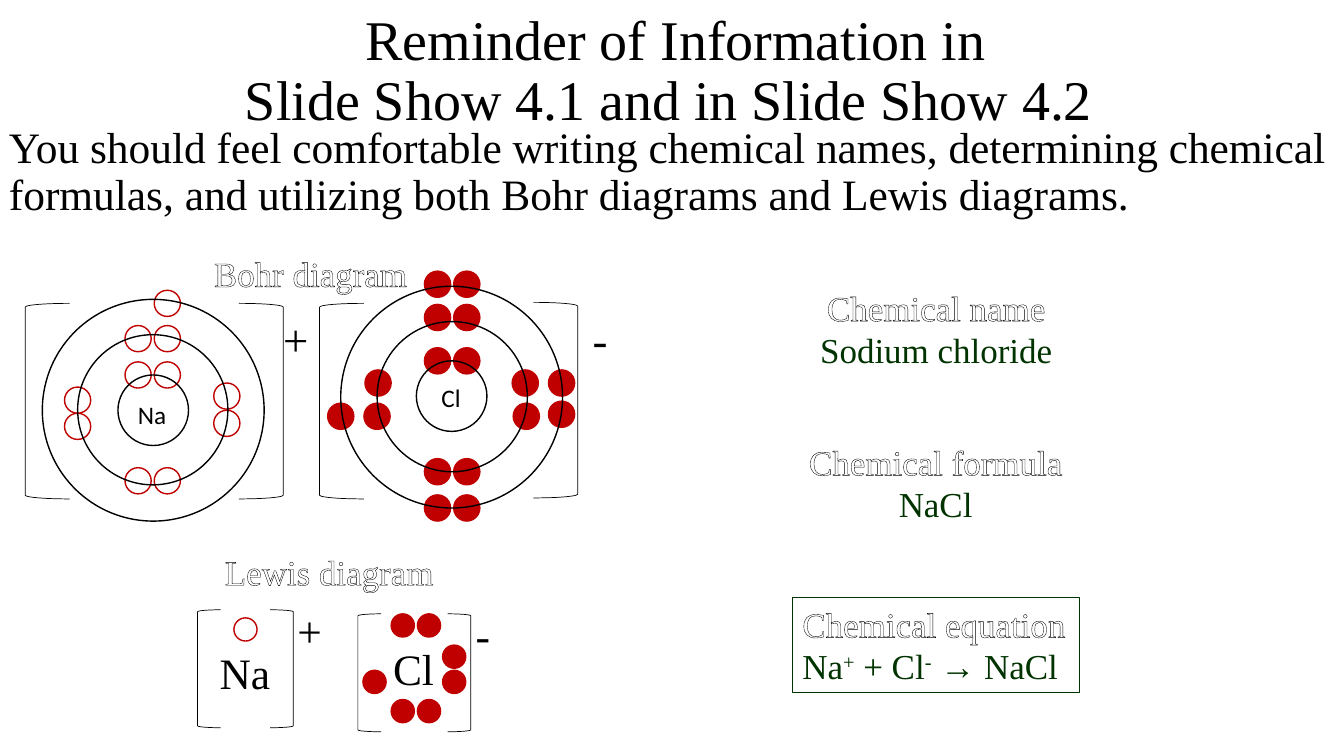
from dataclasses import dataclass
from itertools import product

from lxml.etree import SubElement
from pptx import Presentation
from pptx.dml.color import RGBColor
from pptx.enum.shapes import MSO_SHAPE
from pptx.enum.text import MSO_ANCHOR, MSO_AUTO_SIZE, PP_ALIGN
from pptx.oxml.ns import qn
from pptx.util import Emu, Pt

EMU_PER_PX = 9144
COLORS = {"black": "000000", "white": "FFFFFF", "red": "C00000", "green": "003300"}
SERIF = "Times New Roman"


@dataclass(frozen=True)
class Span:
    text: str
    color: str = "black"
    outlined: bool = False
    raised: bool = False


@dataclass(frozen=True)
class Electrons:
    lefts: tuple[int, ...]
    tops: tuple[int, ...]
    fill: str
    size: int = 26


@dataclass(frozen=True)
class Shells:
    frames: tuple[tuple[int, int, int], ...]


@dataclass(frozen=True)
class BracketPair:
    left: int
    right: int
    left_top: int
    right_top: int
    width: int
    height: int


@dataclass(frozen=True)
class Symbol:
    text: str
    frame: tuple[int, int, int, int]
    size: int
    font: str = SERIF


ELECTRONS = (
    Electrons((421, 450), (269, 302, 345, 455, 491), "red"),
    Electrons((544,), (367, 398), "red"),
    Electrons((325, 361), (400,), "red"),
    Electrons((362, 508), (367,), "red"),
    Electrons((509,), (400,), "red"),
    Electrons((153,), (288,), "white"),
    Electrons((124, 153), (323, 359, 464), "white"),
    Electrons((64,), (384, 410), "white"),
    Electrons((212,), (380, 407), "white"),
    Electrons((232,), (613,), "white", 23),
    Electrons((388, 414), (609, 694), "red", 23),
    Electrons((439,), (640, 665), "red", 23),
    Electrons((360,), (665,), "red", 23),
)
SHELLS = (
    Shells(((117, 372, 70), (77, 332, 149), (42, 297, 220))),
    Shells(((413, 358, 70), (374, 319, 149), (338, 284, 220))),
)
BRACKETS = (
    BracketPair(25, 237, 301, 301, 44, 194),
    BracketPair(317, 529, 301, 300, 44, 194),
    BracketPair(196, 268, 605, 605, 23, 117),
    BracketPair(355, 444, 609, 609, 23, 117),
)
SYMBOLS = (
    Symbol("Na", (127, 391, 49, 40), 18, "Calibri"),
    Symbol("Cl", (428, 374, 39, 40), 18, "Calibri"),
    Symbol("+", (271, 304, 45, 64), 32),
    Symbol("-", (578, 304, 35, 64), 32),
    Symbol("Na", (208, 636, 71, 62), 31),
    Symbol("Cl", (380, 632, 61, 62), 31),
    Symbol("+", (285, 594, 45, 62), 31),
    Symbol("-", (462, 598, 35, 62), 31),
)


def px(length: int) -> Emu:
    return Emu(length * EMU_PER_PX)


def rgb(name: str) -> RGBColor:
    return RGBColor.from_string(COLORS[name])


def add_outline(run) -> None:
    properties = run._r.get_or_add_rPr()
    line = SubElement(properties, qn("a:ln"), w="9525")
    fill = SubElement(line, qn("a:solidFill"))
    SubElement(fill, qn("a:srgbClr"), val=COLORS["black"])
    properties.insert(0, line)


def add_text(page, frame: tuple[int, int, int, int], *paragraphs: tuple[Span, ...],
             size: int = 25, font: str = SERIF, align=PP_ALIGN.LEFT,
             anchor=MSO_ANCHOR.TOP, spacing: float = 1.0,
             wrap: bool = False, grow: bool = True) -> None:
    box = page.shapes.add_textbox(*map(px, frame))
    body = box.text_frame
    body.word_wrap = wrap
    body.auto_size = MSO_AUTO_SIZE.SHAPE_TO_FIT_TEXT if grow else MSO_AUTO_SIZE.NONE
    body.vertical_anchor = anchor
    for index, spans in enumerate(paragraphs):
        para = body.add_paragraph() if index else body.paragraphs[0]
        para.alignment = align
        para.line_spacing = spacing
        for span in spans:
            for part, line in enumerate(span.text.split("\n")):
                if part:
                    para.add_line_break()
                run = para.add_run()
                run.text = line
                run.font.size = Pt(size)
                run.font.name = font
                run.font.color.rgb = rgb(span.color)
                if span.outlined:
                    add_outline(run)
                if span.raised:
                    run.font._element.set("baseline", "30000")


def add_figure(page, kind, frame: tuple[int, int, int, int], line: str = "black",
               fill: str | None = None, weight: float = 1, flipped: bool = False) -> None:
    shape = page.shapes.add_shape(kind, *map(px, frame))
    shape.shadow.inherit = False
    if fill:
        shape.fill.solid()
        shape.fill.fore_color.rgb = rgb(fill)
    else:
        shape.fill.background()
    shape.line.color.rgb = rgb(line)
    shape.line.width = Pt(weight)
    if flipped:
        shape._element.spPr.find(qn("a:xfrm")).set("flipH", "1")


def add_brackets(page, pair: BracketPair) -> None:
    for left, top, flipped in ((pair.left, pair.left_top, False),
                               (pair.right, pair.right_top, True)):
        add_figure(page, MSO_SHAPE.LEFT_BRACKET, (left, top, pair.width, pair.height),
                   weight=0.5, flipped=flipped)


def heading(text: str) -> tuple[Span, ...]:
    return (Span(text, "white", outlined=True),)


def add_labels(page) -> None:
    add_text(page, (23, 9, 1294, 125),
             (Span("Reminder of Information in\nSlide Show 4.1 and in Slide Show 4.2 "),),
             size=40, align=PP_ALIGN.CENTER, anchor=MSO_ANCHOR.MIDDLE,
             spacing=0.9, wrap=True, grow=False)
    add_text(page, (-1, 120, 1335, 106),
             (Span("You should feel comfortable writing chemical names, determining "
                   "chemical formulas, and utilizing both Bohr diagrams and Lewis diagrams."),),
             size=31, spacing=0.9, wrap=True, grow=False)
    add_text(page, (802, 279, 253, 94), heading("Chemical name"),
             (Span("Sodium chloride", "green"),), align=PP_ALIGN.CENTER)
    add_text(page, (767, 432, 322, 94), heading("Chemical formula"),
             (Span("NaCl", "green"),), align=PP_ALIGN.CENTER, wrap=True)
    equation_frame = (786, 593, 285, 94)
    add_figure(page, MSO_SHAPE.RECTANGLE, equation_frame, "green", "white")
    add_text(page, equation_frame, heading("Chemical equation"),
             (Span("Na", "green"), Span("+", "green", raised=True),
              Span(" + Cl", "green"), Span("-", "green", raised=True),
              Span(" → NaCl", "green")))
    add_text(page, (201, 541, 251, 52), heading("Lewis diagram"),
             align=PP_ALIGN.CENTER, wrap=True)
    add_text(page, (201, 245, 214, 52), heading("Bohr diagram"), align=PP_ALIGN.CENTER)


def add_diagrams(page) -> None:
    for group in ELECTRONS:
        for left, top in product(group.lefts, group.tops):
            add_figure(page, MSO_SHAPE.OVAL, (left, top, group.size, group.size),
                       "red", group.fill)
    for atom in SHELLS:
        for left, top, diameter in atom.frames:
            add_figure(page, MSO_SHAPE.OVAL, (left, top, diameter, diameter))
    for pair in BRACKETS:
        add_brackets(page, pair)
    for symbol in SYMBOLS:
        add_text(page, symbol.frame, (Span(symbol.text),), size=symbol.size, font=symbol.font)


def main() -> None:
    deck = Presentation()
    deck.slide_width, deck.slide_height = px(1333), px(750)
    page = deck.slides.add_slide(deck.slide_layouts[6])
    add_diagrams(page)
    add_labels(page)
    deck.save("out.pptx")


if __name__ == "__main__":
    main()
